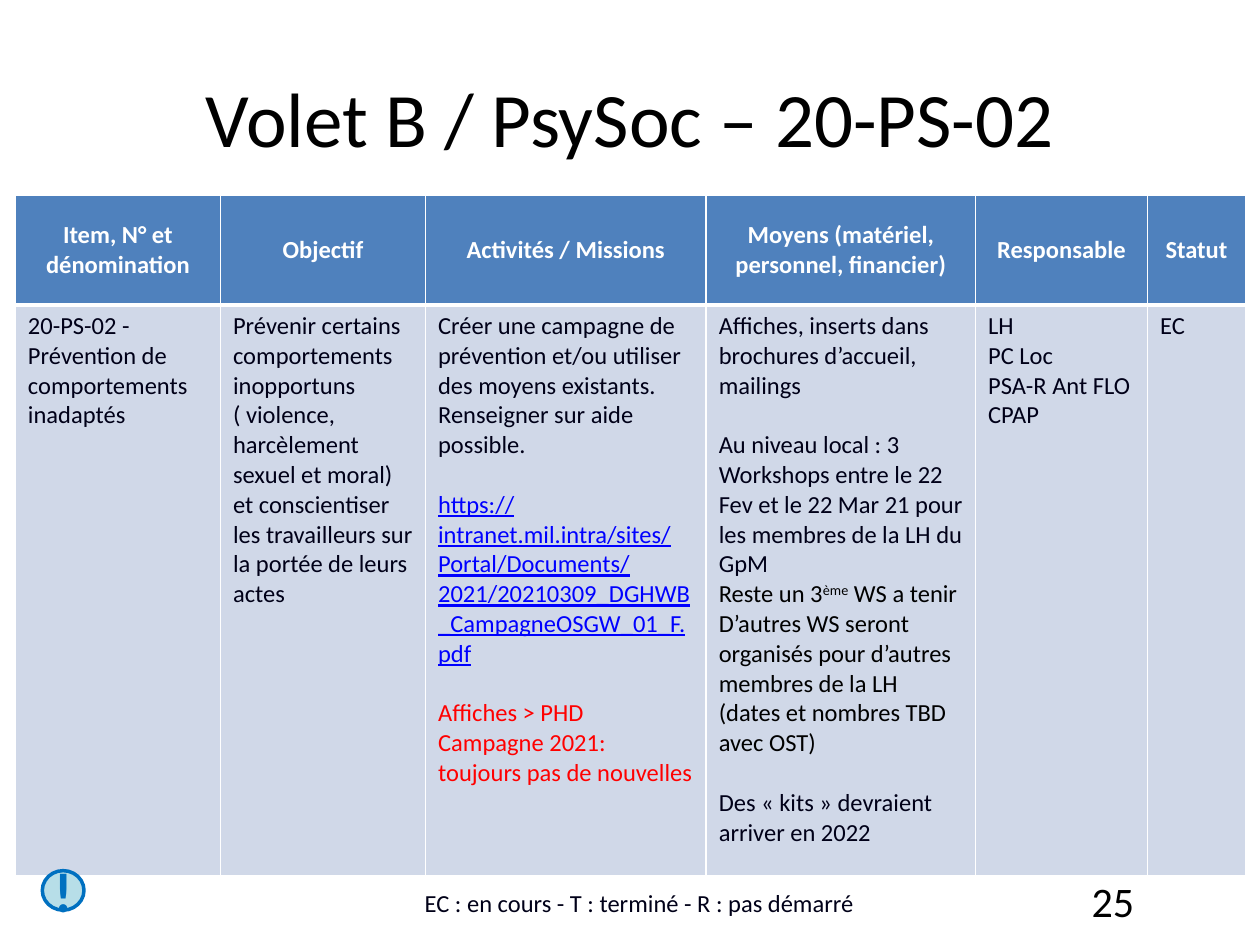
"""Build the action-sheet slide for item 20-PS-02."""
from lxml.etree import SubElement
from pptx import Presentation
from pptx.dml.color import RGBColor
from pptx.enum.shapes import MSO_SHAPE
from pptx.enum.text import MSO_ANCHOR, PP_ALIGN
from pptx.oxml.ns import qn
from pptx.util import Pt

COLORS = {"black": "000000", "ink": "000018", "white": "FFFFFF", "header": "4F81BD",
          "body": "D0D8E8", "link": "0000FF", "alert": "FF0000",
          "badge": "B7DEE8", "badge_edge": "0070C0"}
BLANK_LINE = 17


def add_run(paragraph, text, size, color, bold=False, underline=False, baseline=0):
    for index, line in enumerate(text.split("\n")):
        if index:
            paragraph.add_line_break()
        run = paragraph.add_run()
        run.text = line
        run.font.name = "Calibri"
        run.font.size = Pt(size)
        run.font.bold = bold
        run.font.underline = underline
        run.font.color.rgb = RGBColor.from_string(COLORS[color])
        if baseline:
            run.font._element.set("baseline", str(baseline * 1000))


def style_cell(cell, fill, top, bottom):
    properties = cell._tc.get_or_add_tcPr()
    for side, width in (("lnL", 1), ("lnR", 1), ("lnT", top), ("lnB", bottom)):
        border = SubElement(properties, qn(f"a:{side}"), w=str(Pt(width)))
        border_fill = SubElement(border, qn("a:solidFill"))
        SubElement(border_fill, qn("a:srgbClr"), val=COLORS["white"])
    cell.fill.solid()
    cell.fill.fore_color.rgb = RGBColor.from_string(COLORS[fill])


presentation = Presentation()
presentation.slide_width, presentation.slide_height = Pt(720), Pt(540)
slide = presentation.slides.add_slide(presentation.slide_layouts[5])

title = slide.shapes.title
title.left, title.top, title.width, title.height = Pt(36), Pt(21.6), Pt(648), Pt(90)
title.text_frame.vertical_anchor = MSO_ANCHOR.MIDDLE
title_line = title.text_frame.paragraphs[0]
title_line.alignment = PP_ALIGN.CENTER
add_run(title_line, "Volet B / PsySoc – 20-PS-02", 44, "black")

columns = [
    ("Item, N° et dénomination", 117.2, [
        (0, [("20-PS-02 - Prévention de comportements inadaptés", "ink")])]),
    ("Objectif", 117.2, [
        (0, [("Prévenir certains comportements inopportuns ( violence, harcèlement sexuel et moral)", "ink")]),
        (0, [("et conscientiser les travailleurs sur la portée de leurs actes", "ink")])]),
    ("Activités / Missions", 160.4, [
        (0, [("Créer une campagne de prévention et/ou utiliser des moyens existants. "
              "Renseigner sur aide possible.", "ink")]),
        (BLANK_LINE, [("https://intranet.mil.intra/sites/Portal/Documents/2021/"
                       "20210309_DGHWB_CampagneOSGW_01_F.pdf", "link", False, True)]),
        (BLANK_LINE, [("Affiches > PHD", "alert")]),
        (0, [("Campagne 2021: toujours pas de nouvelles", "alert")])]),
    ("Moyens (matériel, personnel, financier)", 153.9, [
        (0, [("Affiches, inserts dans brochures d’accueil, mailings", "ink")]),
        (BLANK_LINE, [("Au niveau local : 3 Workshops entre le 22 Fev et le 22 Mar 21 "
                       "pour les membres de la LH du GpM", "ink")]),
        (0, [("Reste un 3", "black"), ("ème", "black", False, False, 30),
             (" WS a tenir\nD’autres WS seront organisés pour d’autres membres de la LH "
              "(dates et nombres TBD avec OST)", "black")]),
        (BLANK_LINE, [("Des « kits » devraient arriver en 2022", "ink")])]),
    ("Responsable", 98.3, [
        (0, [("LH\nPC Loc", "ink")]),
        (0, [("PSA-R Ant FLO", "ink")]),
        (0, [("CPAP", "ink")])]),
    ("Statut", 56, [(0, [("EC", "ink")])]),
]
actions = slide.shapes.add_table(2, len(columns), Pt(8.8), Pt(111.6), Pt(703), Pt(388.8)).table
actions.horz_banding = False
actions.rows[0].height, actions.rows[1].height = Pt(62.6), Pt(326.2)

for index, (heading, width, paragraphs) in enumerate(columns):
    actions.columns[index].width = Pt(width)
    heading_cell, detail_cell = actions.cell(0, index), actions.cell(1, index)
    style_cell(heading_cell, "header", 1, 3)
    heading_cell.vertical_anchor = MSO_ANCHOR.MIDDLE
    heading_line = heading_cell.text_frame.paragraphs[0]
    heading_line.alignment = PP_ALIGN.CENTER
    add_run(heading_line, heading, 14, "white", bold=True)

    style_cell(detail_cell, "body", 3, 1)
    for position, (gap, runs) in enumerate(paragraphs):
        frame = detail_cell.text_frame
        detail_line = frame.add_paragraph() if position else frame.paragraphs[0]
        if gap:
            detail_line.space_before = Pt(gap)
        for text, color, *effects in runs:
            add_run(detail_line, text, 14, color, *effects)

footers = [
    ("25", 516.2, 139, 28.8, 24, "black", PP_ALIGN.RIGHT, MSO_ANCHOR.MIDDLE),
    ("EC : en cours - T : terminé - R : pas démarré", 167, 396.7, 27.4, 14, "ink",
     PP_ALIGN.CENTER, MSO_ANCHOR.BOTTOM),
]
for text, left, width, height, size, color, alignment, anchor in footers:
    footer = slide.shapes.add_textbox(Pt(left), Pt(500.4), Pt(width), Pt(height)).text_frame
    footer.word_wrap = True
    footer.vertical_anchor = anchor
    footer.paragraphs[0].alignment = alignment
    add_run(footer.paragraphs[0], text, size, color)

badge = slide.shapes.add_shape(MSO_SHAPE.FLOWCHART_CONNECTOR, Pt(24.2), Pt(497.5), Pt(23.8), Pt(22.6))
badge.shadow.inherit = False
badge.fill.solid()
badge.fill.fore_color.rgb = RGBColor.from_string(COLORS["badge"])
badge.line.color.rgb = RGBColor.from_string(COLORS["badge_edge"])
badge.line.width = Pt(2)
mark = badge.text_frame
mark.word_wrap = False
mark.margin_left = mark.margin_right = mark.margin_top = mark.margin_bottom = 0
mark.vertical_anchor = MSO_ANCHOR.MIDDLE
mark.paragraphs[0].alignment = PP_ALIGN.CENTER
add_run(mark.paragraphs[0], "!", 32, "badge_edge", bold=True)

presentation.save("out.pptx")
